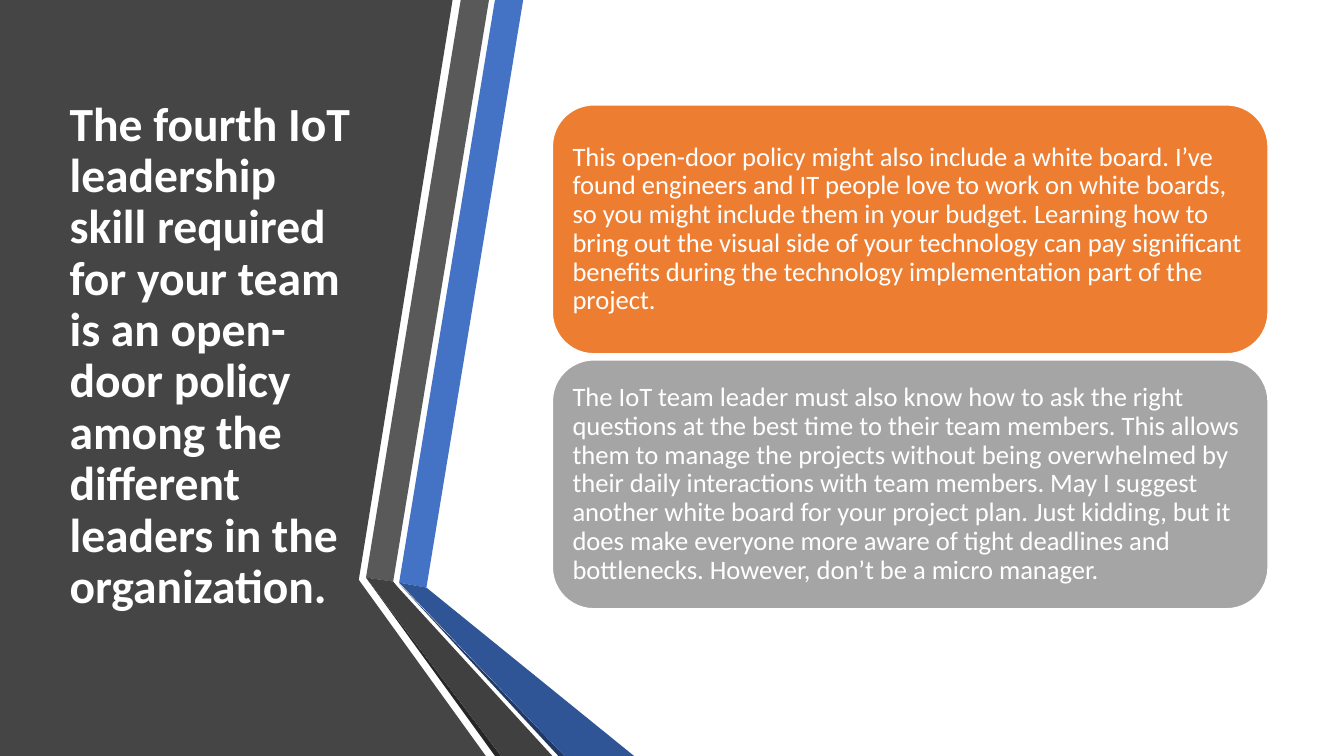
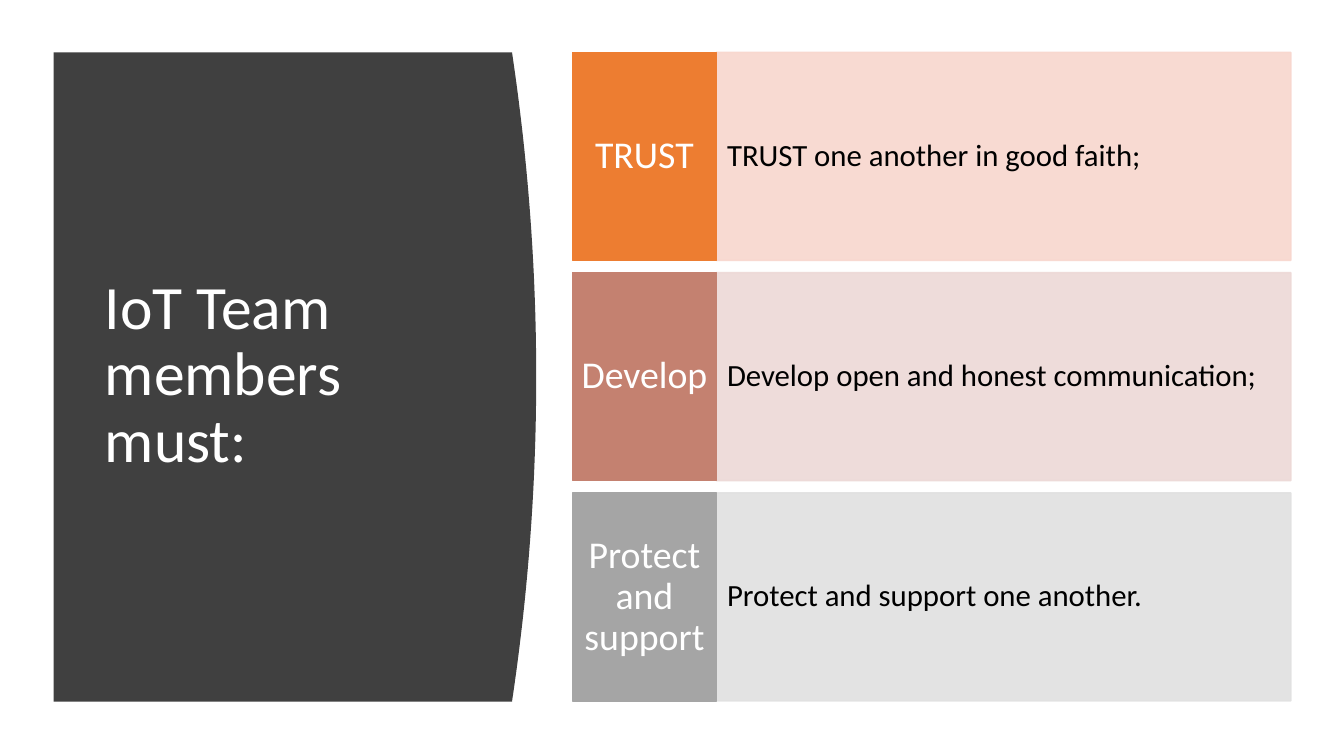
"""Two slides on IoT leadership, laid out on a grid of 100 columns by 100 rows."""
from lxml import etree
from pptx import Presentation
from pptx.dml.color import RGBColor
from pptx.enum import shapes, text
from pptx.oxml.ns import qn
from pptx import util as u

FONT, WHITE, BLACK = "Calibri", "FFFFFF", "000000"
DARK, ORANGE, GRAY = "404040", "ED7D31", "A5A5A5"
RECT, ROUND = shapes.MSO_SHAPE.RECTANGLE, shapes.MSO_SHAPE.ROUNDED_RECTANGLE

prs = Presentation()
prs.slide_width, prs.slide_height = u.Inches(13.333), u.Inches(7.5)
COL, ROW = prs.slide_width / 100, prs.slide_height / 100


def paint(sp, fill, line=None, alpha=100):
    """Set fill, outline and opacity of a shape, without shadow."""
    sp.shadow.inherit = False
    sp.fill.solid()
    sp.fill.fore_color.rgb = RGBColor.from_string(fill)
    if line:
        sp.line.color.rgb = RGBColor.from_string(line)
        sp.line.width = u.Pt(1)
    else:
        sp.line.fill.background()
    if alpha < 100:
        for clr in sp._element.spPr.iter(qn("a:srgbClr")):
            etree.SubElement(clr, qn("a:alpha")).set("val", str(alpha * 1000))


def write(sp, words, size, color, inset=0.75, bold=False, align=text.PP_ALIGN.LEFT):
    """Put one vertically centred paragraph into a shape."""
    tf = sp.text_frame
    tf.word_wrap = True
    tf.vertical_anchor = text.MSO_ANCHOR.MIDDLE
    tf.margin_left = tf.margin_right = int(inset * COL)
    tf.margin_top = tf.margin_bottom = 0
    p = tf.paragraphs[0]
    p.alignment, p.line_spacing = align, 0.9
    r = p.add_run()
    r.text = words
    r.font.name, r.font.size, r.font.bold = FONT, u.Pt(size), bold
    r.font.color.rgb = RGBColor.from_string(color)


bulge = [(38.1 + 1.8 * (1 - (i / 20) ** 2), 49.87 + 42.93 * i / 20) for i in range(-20, 21)]

leader_cards = [
    ("This open-door policy might also include a white board. I’ve found engineers and IT "
     "people love to work on white boards, so you might include them in your budget. Learning "
     "how to bring out the visual side of your technology can pay significant benefits during "
     "the technology implementation part of the project.", ORANGE),
    ("The IoT team leader must also know how to ask the right questions at the best time to "
     "their team members. This allows them to manage the projects without being overwhelmed by "
     "their daily interactions with team members. May I suggest another white board for your "
     "project plan. Just kidding, but it does make everyone more aware of tight deadlines and "
     "bottlenecks. However, don’t be a micro manager.", GRAY),
]
member_duties = [
    ("TRUST", "TRUST one another in good faith;", ORANGE, "F8D7CE"),
    ("Develop", "Develop open and honest communication;", "C48170", "EDD9D7"),
    ("Protect and support", "Protect and support one another.", GRAY, "E1E1E1"),
]

card_top, card_height, card_gap = 13.87, 32.93, 0.8
cards = [
    (ROUND, 41.1, card_top + i * (card_height + card_gap), 53.25, card_height,
     fill, WHITE, 100, words, 19, WHITE, 0.6, text.PP_ALIGN.LEFT)
    for i, (words, fill) in enumerate(leader_cards)
]

duty_top, duty_height, duty_gap = 6.93, 27.53, 1.6
duties = []
for i, (label, detail, strong, pale) in enumerate(member_duties):
    top = duty_top + i * (duty_height + duty_gap)
    duties += [
        (RECT, 53.3, top, 42.75, duty_height,
         pale, pale, 90, detail, 22, BLACK, 0.8, text.PP_ALIGN.LEFT),
        (RECT, 42.6, top, 10.7, duty_height,
         strong, strong, 100, label, 27, WHITE, 0.6, text.PP_ALIGN.CENTER),
    ]

deck = [
    {
        "outlines": [
            ("454545", [(0, 0), (33.68, 0), (26.7, 76.7), (36.15, 100), (0, 100)]),
            ("4472C4", [(29.7, 77.07), (31.73, 77.73), (38.93, 0), (36.83, 0)]),
            ("595959", [(36.38, 0), (34.28, 0), (27.23, 76.4), (29.25, 76.93)]),
            ("262626", [(27.23, 76.4), (36.83, 100), (37.28, 100)]),
            ("203864", [(29.7, 77.2), (41.55, 100), (42, 100)]),
            ("2F5597", [(29.7, 77.07), (42, 100), (47.18, 100), (31.73, 77.73)]),
            (DARK, [(27.23, 76.4), (37.28, 100), (41.1, 100), (29.63, 77.73), (29.25, 76.93)]),
        ],
        "title": ("The fourth IoT leadership skill required for your team is an open-door "
                  "policy among the different leaders in the organization.", 34, True),
        "title_box": (4.43, 10, 22.8, 74.4),
        "boxes": cards,
    },
    {
        "outlines": [(DARK, [(4, 6.93), *bulge, (4, 92.8)])],
        "title": ("IoT Team members must:", 44, False),
        "title_box": (7.05, 14.8, 28.05, 69.87),
        "boxes": duties,
    },
]

for page in deck:
    s = prs.slides.add_slide(prs.slide_layouts[6])
    for fill, points in page["outlines"]:
        corners = [(x * COL, y * ROW) for x, y in points]
        fb = s.shapes.build_freeform(*corners[0])
        fb.add_line_segments(corners[1:], close=True)
        paint(fb.convert_to_shape(), fill)

    x, y, w, h = page["title_box"]
    words, size, bold = page["title"]
    tb = s.shapes.add_textbox(int(x * COL), int(y * ROW), int(w * COL), int(h * ROW))
    write(tb, words, size, WHITE, bold=bold)

    for kind, x, y, w, h, fill, line, alpha, words, size, color, inset, align in page["boxes"]:
        sp = s.shapes.add_shape(kind, int(x * COL), int(y * ROW), int(w * COL), int(h * ROW))
        paint(sp, fill, line, alpha)
        write(sp, words, size, color, inset, align=align)

prs.save("out.pptx")
